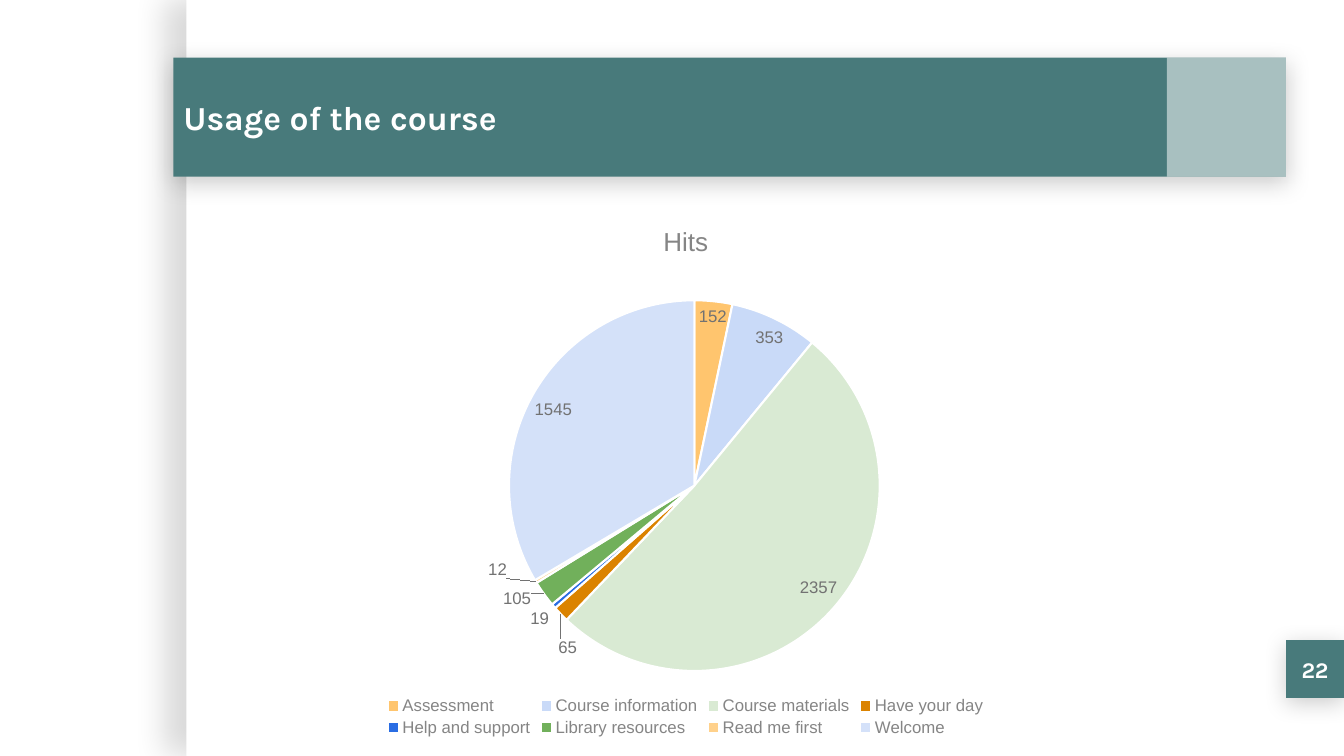
from dataclasses import dataclass
from typing import Optional

from lxml import etree
from pptx import Presentation
from pptx import util as u
from pptx.chart.data import CategoryChartData
from pptx.dml.color import RGBColor
from pptx.enum import chart as ch, shapes, text
from pptx.oxml import parse_xml
from pptx.oxml.ns import nsdecls, qn

WHITE = RGBColor(0xFF, 0xFF, 0xFF)
TEAL = RGBColor(0x48, 0x7A, 0x7B)
GREY = RGBColor(0x85, 0x85, 0x85)
SLATE = RGBColor(0x72, 0x72, 0x72)
DARK = RGBColor(0x43, 0x43, 0x43)


@dataclass
class Shade:
    alpha: int
    blur: float
    dist: float
    angle: int


@dataclass
class Box:
    left: float
    top: float
    width: float
    height: float
    fill: RGBColor
    shade: Optional[Shade] = None
    alpha: int = 100


@dataclass
class Slice:
    label: str
    hits: int
    fill: RGBColor


SIDE = Shade(15, 22.5, 15, 180)
DROP = Shade(20, 16.9, 3.8, 90)

PANEL = Box(4.7, 0, 29.17, 19.05, WHITE, SIDE)
BAND = Box(4.37, 1.45, 28.04, 3, TEAL, DROP)
TILE = Box(29.41, 1.45, 3, 3, WHITE, alpha=53)
BADGE = Box(32.41, 16.13, 1.46, 1.46, TEAL, DROP)

SLICES = [
    Slice("Assessment", 152, RGBColor(0xFF, 0xC5, 0x6E)),
    Slice("Course information", 353, RGBColor(0xC9, 0xDA, 0xF8)),
    Slice("Course materials", 2357, RGBColor(0xD9, 0xEA, 0xD3)),
    Slice("Have your day", 65, RGBColor(0xDB, 0x83, 0x00)),
    Slice("Help and support", 19, RGBColor(0x2A, 0x6D, 0xE3)),
    Slice("Library resources", 105, RGBColor(0x71, 0xB0, 0x5B)),
    Slice("Read me first", 12, RGBColor(0xFF, 0xD1, 0x8B)),
    Slice("Welcome", 1545, RGBColor(0xD4, 0xE1, 0xF9)),
]


def add_shade(shape, shade: Shade) -> None:
    props = shape._element.spPr
    for old in props.findall(qn("a:effectLst")):
        props.remove(old)
    props.append(parse_xml(
        f'<a:effectLst {nsdecls("a")}><a:outerShdw blurRad="{u.Pt(shade.blur)}" '
        f'dist="{u.Pt(shade.dist)}" dir="{shade.angle * 60000}" algn="bl" rotWithShape="0">'
        f'<a:srgbClr val="000000"><a:alpha val="{shade.alpha * 1000}"/></a:srgbClr>'
        '</a:outerShdw></a:effectLst>'))


def add_box(slide, box: Box):
    shape = slide.shapes.add_shape(
        shapes.MSO_SHAPE.RECTANGLE,
        u.Cm(box.left), u.Cm(box.top), u.Cm(box.width), u.Cm(box.height))
    shape.shadow.inherit = False
    shape.fill.solid()
    shape.fill.fore_color.rgb = box.fill
    shape.line.fill.background()
    if box.alpha < 100:
        color = shape._element.spPr.find(f".//{qn('a:srgbClr')}")
        etree.SubElement(color, qn("a:alpha")).set("val", str(box.alpha * 1000))
    if box.shade:
        add_shade(shape, box.shade)
    return shape


def set_font(font, size: float, color: RGBColor, name: str = "Arial", bold: bool = False) -> None:
    font.size = u.Pt(size)
    font.name = name
    font.bold = bold
    font.color.rgb = color


def set_text(shape, words: str, size: float, align) -> None:
    frame = shape.text_frame
    frame.text = words
    frame.word_wrap = True
    frame.auto_size = text.MSO_AUTO_SIZE.NONE
    frame.vertical_anchor = text.MSO_ANCHOR.MIDDLE
    frame.margin_left = frame.margin_right = u.Cm(0.25)
    frame.margin_top = frame.margin_bottom = u.Cm(0.25)
    para = frame.paragraphs[0]
    para.alignment = align
    set_font(para.runs[0].font, size, WHITE, "Karla", True)


def place_plot(chart, left: float, top: float, width: float, height: float) -> None:
    area = chart._chartSpace.chart.plotArea
    for old in area.findall(qn("c:layout")):
        area.remove(old)
    area.insert(0, parse_xml(
        f'<c:layout {nsdecls("c")}><c:manualLayout><c:layoutTarget val="inner"/>'
        '<c:xMode val="edge"/><c:yMode val="edge"/>'
        f'<c:x val="{left}"/><c:y val="{top}"/><c:w val="{width}"/><c:h val="{height}"/>'
        '</c:manualLayout></c:layout>'))


def add_pie(slide) -> None:
    data = CategoryChartData()
    data.categories = [part.label for part in SLICES]
    data.add_series("Hits", [part.hits for part in SLICES])
    chart = slide.shapes.add_chart(
        ch.XL_CHART_TYPE.PIE, u.Cm(6.58), u.Cm(5.13), u.Cm(21.41), u.Cm(13.54), data).chart
    set_font(chart.font, 10, DARK)

    chart.has_title = True
    title = chart.chart_title
    title.include_in_layout = False
    title.text_frame.text = "Hits"
    set_font(title.text_frame.paragraphs[0].runs[0].font, 18.6, GREY)

    chart.has_legend = True
    chart.legend.position = ch.XL_LEGEND_POSITION.BOTTOM
    chart.legend.include_in_layout = False
    set_font(chart.legend.font, 12, GREY)

    plot = chart.plots[0]
    plot.vary_by_categories = True
    series = plot.series[0]
    for index, part in enumerate(SLICES):
        form = series.points[index].format
        form.fill.solid()
        form.fill.fore_color.rgb = part.fill
        form.line.color.rgb = WHITE
        form.line.width = u.Pt(1.5)

    labels = series.data_labels
    labels.show_value = True
    labels.position = ch.XL_LABEL_POSITION.BEST_FIT
    set_font(labels.font, 12, SLATE)
    place_plot(chart, 0.29, 0.18, 0.44, 0.69)


def main() -> None:
    deck = Presentation()
    deck.slide_width, deck.slide_height = u.Cm(33.87), u.Cm(19.05)
    slide = deck.slides.add_slide(deck.slide_layouts[5])
    for box in (PANEL, BAND, TILE):
        add_box(slide, box)

    title = slide.shapes.title
    title.left, title.top = u.Cm(BAND.left), u.Cm(BAND.top)
    title.width, title.height = u.Cm(24.97), u.Cm(BAND.height)
    set_text(title, "Usage of the course", 24, text.PP_ALIGN.LEFT)
    slide.shapes._spTree.append(title._element)

    set_text(add_box(slide, BADGE), "22", 16, text.PP_ALIGN.CENTER)
    add_pie(slide)
    deck.save("out.pptx")


if __name__ == "__main__":
    main()
